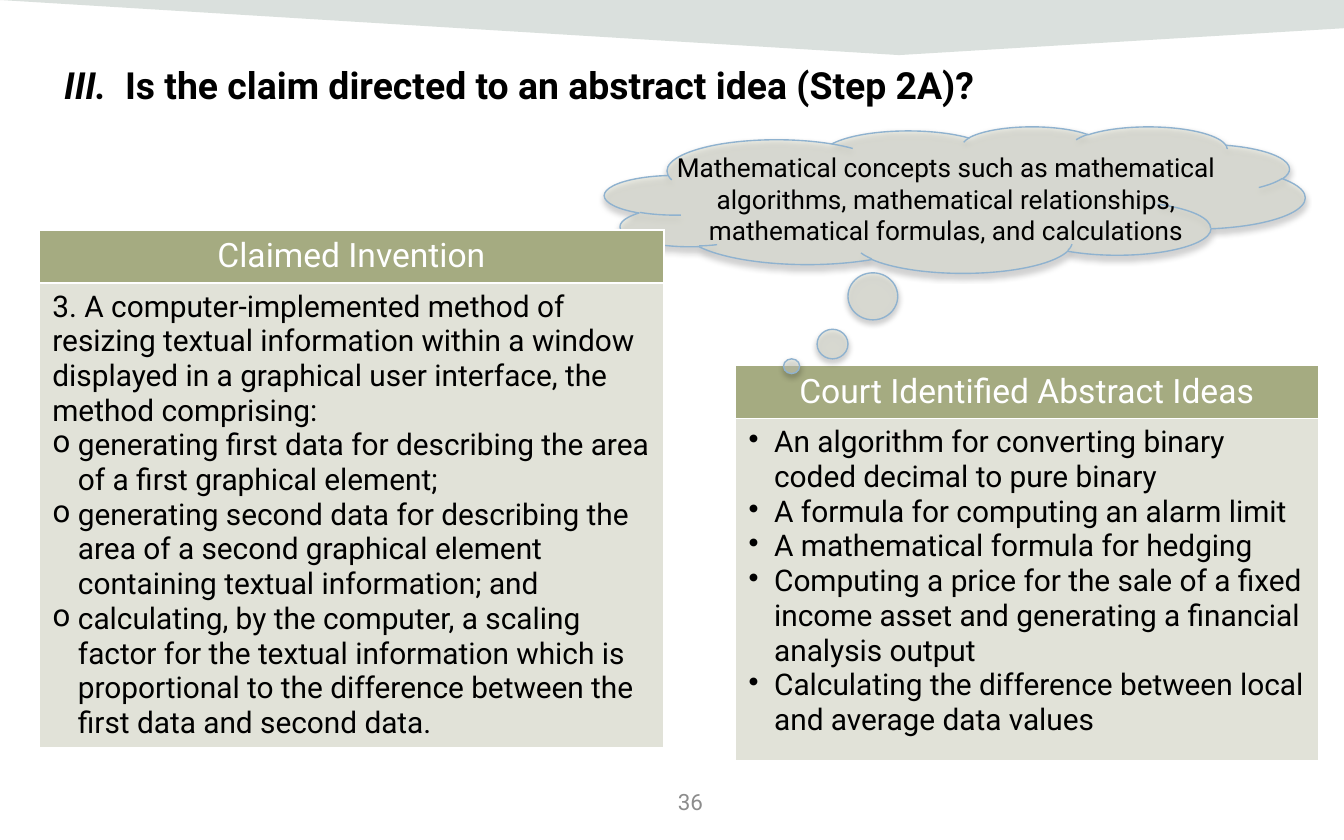
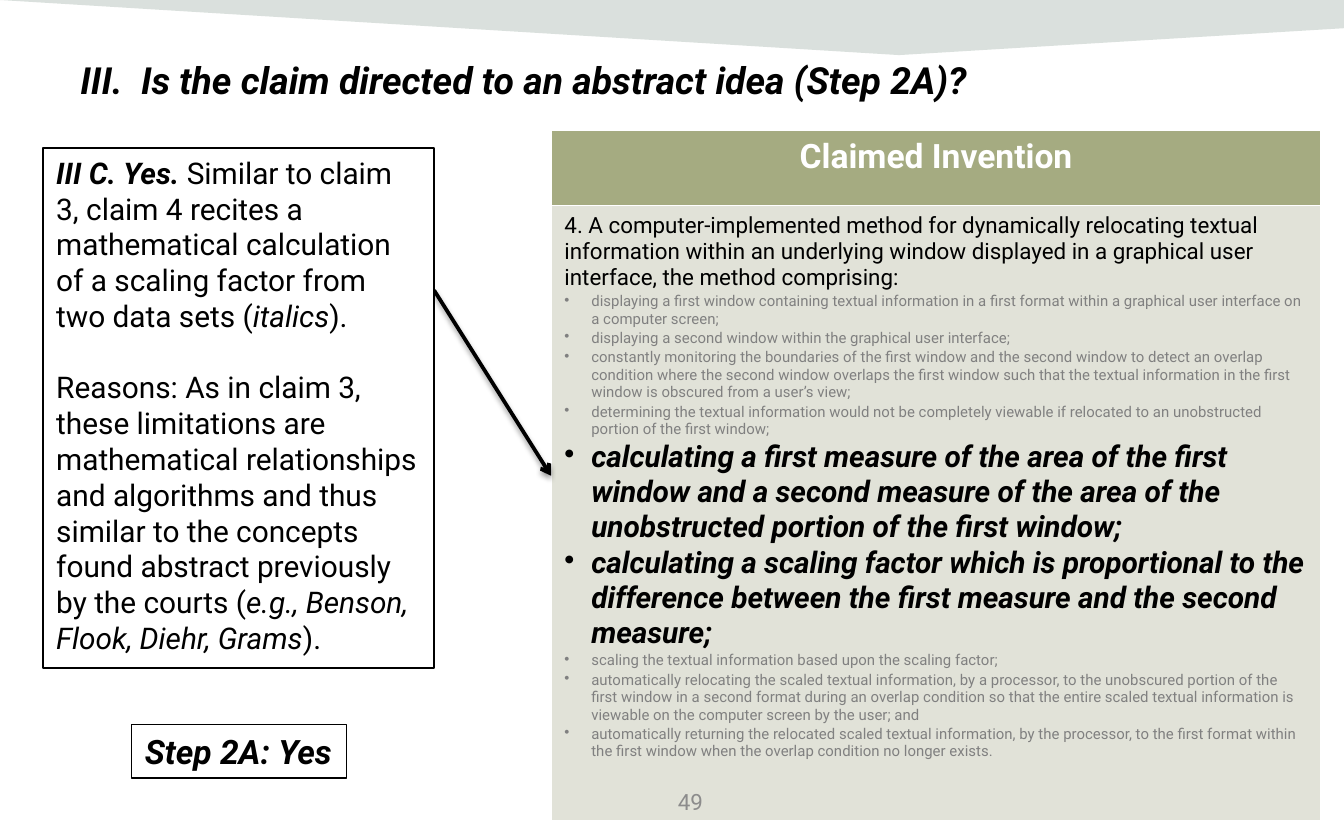
from lxml import etree
from pptx import Presentation
from pptx.dml.color import RGBColor
from pptx.enum.shapes import MSO_CONNECTOR, MSO_SHAPE
from pptx.enum.text import MSO_ANCHOR, PP_ALIGN
from pptx.oxml.ns import qn
from pptx.util import Inches, Pt

CLOUD, OVAL, RECT = MSO_SHAPE.CLOUD, MSO_SHAPE.OVAL, MSO_SHAPE.RECTANGLE
STRAIGHT = MSO_CONNECTOR.STRAIGHT
TOP, MIDDLE = MSO_ANCHOR.TOP, MSO_ANCHOR.MIDDLE
LEFT, CENTER, RIGHT = PP_ALIGN.LEFT, PP_ALIGN.CENTER, PP_ALIGN.RIGHT

COLS, ROWS = 100, 62.5
UNIT = Inches(0.1)
FONT = "Roboto"
HUES = {
    "band": "09331C", "olive": "A5AB81", "pale": "E1E2D8", "cloud": "DBDDCD",
    "sky": "8FB2CF", "ink": "000000", "white": "FFFFFF", "gray": "808080",
    "page": "8C8C8C",
}
STEP = "Is the claim directed to an abstract idea (Step 2A)?"
STRONG = {"bold": True, "italic": True}
SLANT = {"italic": True}
HEAD = {"size": 18, "hue": "white", "alignment": CENTER}


def hue(name):
    return RGBColor.from_string(HUES[name])


def node(parent, tag, **attrs):
    return etree.SubElement(parent, qn(tag), {k: str(v) for k, v in attrs.items()})


def spots(*nums):
    """Turn grid units into EMU."""
    return [round(n * UNIT) for n in nums]


class Deck:
    def __init__(self):
        self.prs = Presentation()
        self.prs.slide_width, self.prs.slide_height = spots(COLS, ROWS)

    def start(self):
        self.slide = self.prs.slides.add_slide(self.prs.slide_layouts[6])
        self.items = self.slide.shapes
        pen = self.items.build_freeform(0, 0)
        pen.add_line_segments(
            [spots(*dot) for dot in ((COLS, 0), (COLS, 2.1), (66.9, 4.1))])
        self.dress(pen.convert_to_shape(), "band", 15)

    def dress(self, shape, fill=None, alpha=100, line=None, width=0.75, shade=None):
        """Set fill, outline and shadow of a shape."""
        if fill:
            shape.fill.solid()
            shape.fill.fore_color.rgb = hue(fill)
            if alpha < 100:
                tint = shape._element.spPr.find(".//" + qn("a:srgbClr"))
                node(tint, "a:alpha", val=alpha * 1000)
        else:
            shape.fill.background()
        self.trace(shape, line, width, shade)

    def trace(self, shape, line, width, shade=None):
        """Set the line and shadow; shade is (opacity, distance)."""
        if line:
            shape.line.color.rgb = hue(line)
            shape.line.width = Pt(width)
        else:
            shape.line.fill.background()
        glow = node(shape._element.spPr, "a:effectLst")
        if shade:
            drop = node(glow, "a:outerShdw", blurRad=Pt(3.1), dist=Pt(shade[1]),
                        dir=5400000, rotWithShape=0)
            tint = node(drop, "a:srgbClr", val=HUES["ink"])
            node(tint, "a:alpha", val=shade[0] * 1000)

    def put(self, frame, paras, **base):
        """Fill a frame; a paragraph is (text or runs, format)."""
        for i, (runs, extra) in enumerate(paras):
            para = frame.paragraphs[0] if i == 0 else frame.add_paragraph()
            look = {"alignment": LEFT, "size": 16, "hue": "ink", "name": FONT,
                    "bold": False, "italic": False, **base, **extra}
            para.alignment = look.pop("alignment")
            if "space_before" in look:
                para.space_before = Pt(look.pop("space_before"))
            if "bullet" in look:
                props = para._p.get_or_add_pPr()
                step = Inches(look.pop("indent"))
                props.set("marL", str(step))
                props.set("indent", str(-step))
                node(props, "a:buChar", char=look.pop("bullet"))
            for text, more in [(runs, {})] if isinstance(runs, str) else runs:
                run = para.add_run()
                run.text = text
                style = {**look, **more}
                run.font.color.rgb = hue(style.pop("hue"))
                style["size"] = Pt(style["size"])
                for key, value in style.items():
                    setattr(run.font, key, value)

    def text(self, box, paras, anchor=TOP, **base):
        frame = self.items.add_textbox(*spots(*box)).text_frame
        frame.word_wrap = True
        frame.vertical_anchor = anchor
        self.put(frame, paras, **base)

    def title(self, box, runs):
        self.text(box, [(runs, {})], size=20, bold=True)

    def page(self, num):
        self.text((30, 58, 23.3, 3.3), [(num, {})], MIDDLE,
                  size=12, hue="page", alignment=RIGHT)

    def puff(self, kind, box):
        """Add one part of the thought cloud."""
        shape = self.items.add_shape(kind, *spots(*box))
        self.dress(shape, "cloud", 49, "sky", shade=(35, 1.8))

    def panel(self, box, paras, fill=None, width=0.75, wrap=True, **base):
        shape = self.items.add_shape(RECT, *spots(*box))
        self.dress(shape, fill, line="ink", width=width)
        frame = shape.text_frame
        frame.word_wrap = wrap
        frame.vertical_anchor = TOP
        self.put(frame, paras, **base)

    def arrow(self, *ends):
        line = self.items.add_connector(STRAIGHT, *spots(*ends))
        self.trace(line, "ink", 2, (38, 1.6))
        node(line._element.spPr.find(qn("a:ln")), "a:tailEnd", type="arrow")

    def table(self, left, top, width, rows, head, paras, **more):
        """Add a heading cell above a body cell."""
        box = spots(left, top, width, sum(rows))
        grid = self.items.add_table(2, 1, *box).table
        parts = (("olive", [(head, {**HEAD, **more})]), ("pale", paras))
        for i, (fill, words) in enumerate(parts):
            grid.rows[i].height = spots(rows[i])[0]
            cell = grid.cell(i, 0)
            props = cell._tc.get_or_add_tcPr()
            for side in "LRTB":
                edge = node(props, "a:ln" + side, w=Pt(1))
                node(node(edge, "a:solidFill"), "a:srgbClr", val=HUES["white"])
            cell.fill.solid()
            cell.fill.fore_color.rgb = hue(fill)
            self.put(cell.text_frame, words)


def points(texts, **look):
    return [(text, look) for text in texts]


def math_ideas(deck):
    deck.start()
    deck.table(54.7, 27.2, 43.4, (3.9, 25.5), "Court Identified Abstract Ideas", points([
        "An algorithm for converting binary coded decimal to pure binary",
        "A formula for computing an alarm limit",
        "A mathematical formula for hedging",
        "Computing a price for the sale of a fixed income asset and generating "
        "a financial analysis output",
        "Calculating the difference between local and average data values",
    ], bullet="•", indent=0.19))
    deck.puff(CLOUD, (45, 9.4, 52.1, 10.9))
    deck.table(2.9, 17.1, 46.5, (3.9, 34.5), "Claimed Invention", [
        ("3. A computer‐implemented method of resizing textual information within "
         "a window displayed in a graphical user interface, the method comprising:", {}),
        *points([
            "generating first data for describing the area of a first graphical element;",
            "generating second data for describing the area of a second graphical "
            "element containing textual information; and",
            "calculating, by the computer, a scaling factor for the textual "
            "information which is proportional to the difference between the "
            "first data and second data.",
        ], bullet="o", indent=0.19)])
    deck.page("36")
    deck.text((49.3, 10.8, 42.2, 8.1), [
        ("Mathematical concepts such as mathematical algorithms, mathematical "
         "relationships, mathematical formulas, and calculations", {}),
    ], size=14, alignment=CENTER)
    for box in ((60.8, 24.5, 2.3, 2.2), (58.3, 26.7, 1.2, 1.1), (63.1, 20.3, 3.7, 3.5)):
        deck.puff(OVAL, box)
    deck.title((3.8, 4.1, 93.3, 5.7), [("III.  ", SLANT), (STEP, {})])


def claim_four(deck):
    faint = {"bullet": "•", "indent": 0.2, "space_before": 1, "size": 8, "hue": "gray"}
    loud = {**faint, **STRONG, "size": 16, "hue": "ink"}
    deck.start()
    deck.table(41, 9.7, 57.3, (5.6, 45.8), "Claimed Invention", [
        ("4. A computer‐implemented method for dynamically relocating textual "
         "information within an underlying window displayed in a graphical user "
         "interface, the method comprising:", {"size": 12}),
        *points([
            "displaying a first window containing textual information in a first "
            "format within a graphical user interface on a computer screen;",
            "displaying a second window within the graphical user interface;",
            "constantly monitoring the boundaries of the first window and the second "
            "window to detect an overlap condition where the second window overlaps "
            "the first window such that the textual information in the first window "
            "is obscured from a user’s view;",
            "determining the textual information would not be completely viewable if "
            "relocated to an unobstructed portion of the first window;",
        ], **faint),
        *points([
            "calculating a first measure of the area of the first window and a second "
            "measure of the area of the unobstructed portion of the first window;",
            "calculating a scaling factor which is proportional to the difference "
            "between the first measure and the second measure;",
        ], **loud),
        *points([
            "scaling the textual information based upon the scaling factor;",
            "automatically relocating the scaled textual information, by a processor, "
            "to the unobscured portion of the first window in a second format during "
            "an overlap condition so that the entire scaled textual information is "
            "viewable on the computer screen by the user; and",
            "automatically returning the relocated scaled textual information, by the "
            "processor, to the first format within the first window when the overlap "
            "condition no longer exists.",
        ], **faint)], bold=True)
    deck.page("49")
    deck.arrow(32.3, 21.6, 41, 35.4)
    deck.panel((9.8, 53.9, 16, 4), [("Step 2A: Yes", STRONG)], wrap=False, size=18)
    deck.title((5, 3.8, 95, 4.4), [("III.  " + STEP, SLANT)])
    deck.panel((3.2, 11, 29.1, 38.7), [
        ([("III C. Yes. ", STRONG),
          ("Similar to claim 3, claim 4 recites a mathematical calculation of a "
           "scaling factor from two data sets (", {}),
          ("italics", SLANT), (").", {})], {}),
        ([("Reasons: As in claim 3, these limitations are mathematical relationships "
           "and algorithms and thus similar to the concepts found abstract "
           "previously by the courts (", {}),
          ("e.g., Benson, Flook, Diehr, Grams", SLANT), (").", {})],
         {"space_before": 19}),
    ], fill="white", width=1.25)


def main():
    deck = Deck()
    math_ideas(deck)
    claim_four(deck)
    deck.prs.save("out.pptx")


if __name__ == "__main__":
    main()
